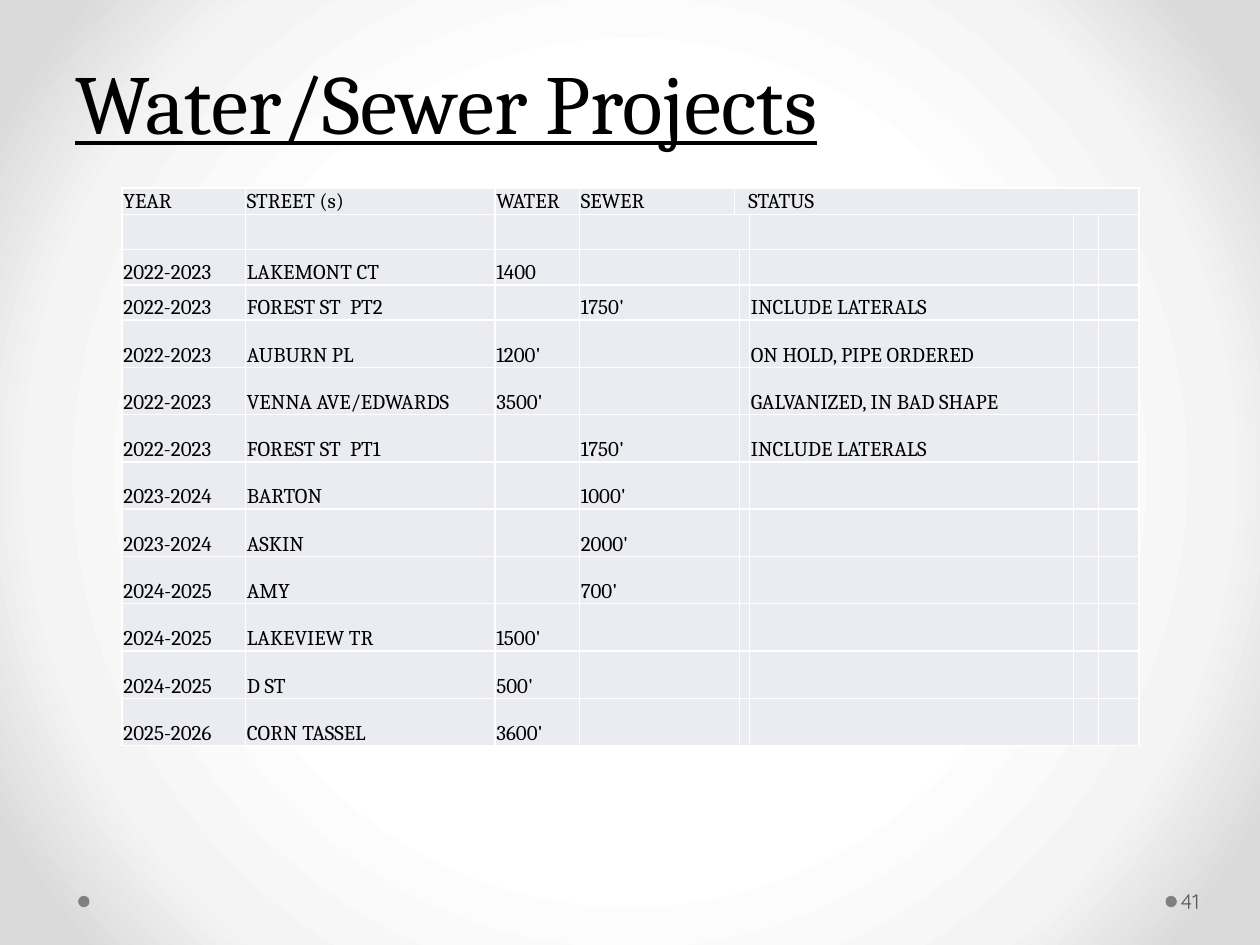
from lxml.etree import SubElement
from pptx import Presentation
from pptx.dml.color import RGBColor
from pptx.enum.shapes import MSO_SHAPE
from pptx.enum.text import MSO_ANCHOR
from pptx.oxml import parse_xml
from pptx.oxml.ns import nsdecls, qn
from pptx.util import Inches, Pt


def color(value):
    return RGBColor.from_string(value)


def add_text(frame, text, size, font, ink):
    frame.text = text
    span = frame.paragraphs[0].runs[0]
    span.font.size = Pt(size)
    span.font.name = font
    span.font.color.rgb = color(ink)
    return span


deck = Presentation()
deck.slide_width, deck.slide_height = Inches(10), Inches(7.5)
page = deck.slides.add_slide(deck.slide_layouts[6])

# Radial background
page.background.fill.solid()
properties = page.background._cSld.bg.bgPr
stops = "".join(
    f'<a:gs pos="{position * 1000}"><a:srgbClr val="{value}"/></a:gs>'
    for position, value in [(50, "FFFFFF"), (76, "F4F4F4"), (92, "DADADA")]
)
gradient = parse_xml(
    f'<a:gradFill {nsdecls("a")} rotWithShape="1"><a:gsLst>{stops}</a:gsLst>'
    '<a:path path="circle"><a:fillToRect l="50000" t="50000" r="50000" b="50000"/>'
    "</a:path></a:gradFill>"
)
properties.replace(properties[0], gradient)

# Footer dots
for left in (9.25, 0.62):
    dot = page.shapes.add_shape(
        MSO_SHAPE.OVAL, Inches(left), Inches(7.11), Inches(0.09), Inches(0.09))
    dot.shadow.inherit = False
    dot.fill.solid()
    dot.fill.fore_color.rgb = color("808080")
    dot.line.fill.background()

# Title
title = page.shapes.add_textbox(Inches(0.5), Inches(0), Inches(9), Inches(1.25))
title.text_frame.word_wrap = True
title.text_frame.vertical_anchor = MSO_ANCHOR.BOTTOM
span = add_text(title.text_frame, "Water/Sewer Projects", 48, "Cambria", "000000")
span.font.underline = True
title.text_frame.paragraphs[0].line_spacing = Pt(58)

# Project table: year, street, water, sewer, status
projects = [
    ("YEAR", "STREET (s)", "WATER", "SEWER", "STATUS"),
    ("", "", "", "", ""),
    ("2022-2023", "LAKEMONT CT", "1400", "", ""),
    ("2022-2023", "FOREST ST  PT2", "", "1750'", "INCLUDE LATERALS"),
    ("2022-2023", "AUBURN PL", "1200'", "", "ON HOLD, PIPE ORDERED"),
    ("2022-2023", "VENNA AVE/EDWARDS", "3500'", "", "GALVANIZED, IN BAD SHAPE"),
    ("2022-2023", "FOREST ST  PT1", "", "1750'", "INCLUDE LATERALS"),
    ("2023-2024", "BARTON", "", "1000'", ""),
    ("2023-2024", "ASKIN", "", "2000'", ""),
    ("2024-2025", "AMY", "", "700'", ""),
    ("2024-2025", "LAKEVIEW TR", "1500'", "", ""),
    ("2024-2025", "D ST", "500'", "", ""),
    ("2025-2026", "CORN TASSEL", "3600'", "", ""),
]
widths = [0.98, 1.98, 0.67, 1.23, 0.04, 0.08, 2.57, 0.2, 0.32]
heights = [0.2] + [0.28] * 3 + [3.38 / 9] * 9
table = page.shapes.add_table(
    len(heights), len(widths), Inches(0.97), Inches(1.49),
    Inches(sum(widths)), Inches(sum(heights))).table
table.first_row = table.horz_banding = False
for column, width in zip(table.columns, widths):
    column.width = Inches(width)
for row, height in zip(table.rows, heights):
    row.height = Inches(height)

# Cell fill, margins and white borders
for cell in table.iter_cells():
    cell.fill.solid()
    cell.fill.fore_color.rgb = color("EAECF2")
    cell.vertical_anchor = MSO_ANCHOR.BOTTOM
    cell.margin_left = cell.margin_right = cell.margin_top = Inches(0.01)
    cell.margin_bottom = 0
    for index, side in enumerate(("lnL", "lnR", "lnT", "lnB")):
        border = parse_xml(
            f'<a:{side} {nsdecls("a")} w="12700"><a:solidFill>'
            f'<a:srgbClr val="FFFFFF"/></a:solidFill></a:{side}>')
        cell._tc.tcPr.insert(index, border)
    # Keeps empty cells at the size of the text
    ending = SubElement(cell.text_frame.paragraphs[0]._p, qn("a:endParaRPr"))
    ending.set("sz", "1200")

# Words and merged cells
for index, project in enumerate(projects):
    status_column = 4 if index == 0 else 6
    for column, text in zip((0, 1, 2, 3, status_column), project):
        if text:
            add_text(table.cell(index, column).text_frame, text, 12, "Cambria", "000000")
    first, last = {0: (4, 8), 1: (3, 5)}.get(index, (3, 4))
    table.cell(index, first).merge(table.cell(index, last))
table.cell(0, 4).margin_left = Inches(0.11)

# Page number
number = page.shapes.add_textbox(Inches(9.34), Inches(6.95), Inches(0.61), Inches(0.4))
number.text_frame.word_wrap = True
number.text_frame.vertical_anchor = MSO_ANCHOR.MIDDLE
number.text_frame.margin_left = Inches(0.03)
number.text_frame.margin_right = Inches(0.05)
add_text(number.text_frame, "41", 12, "Quicksand", "595959")

deck.save("out.pptx")
